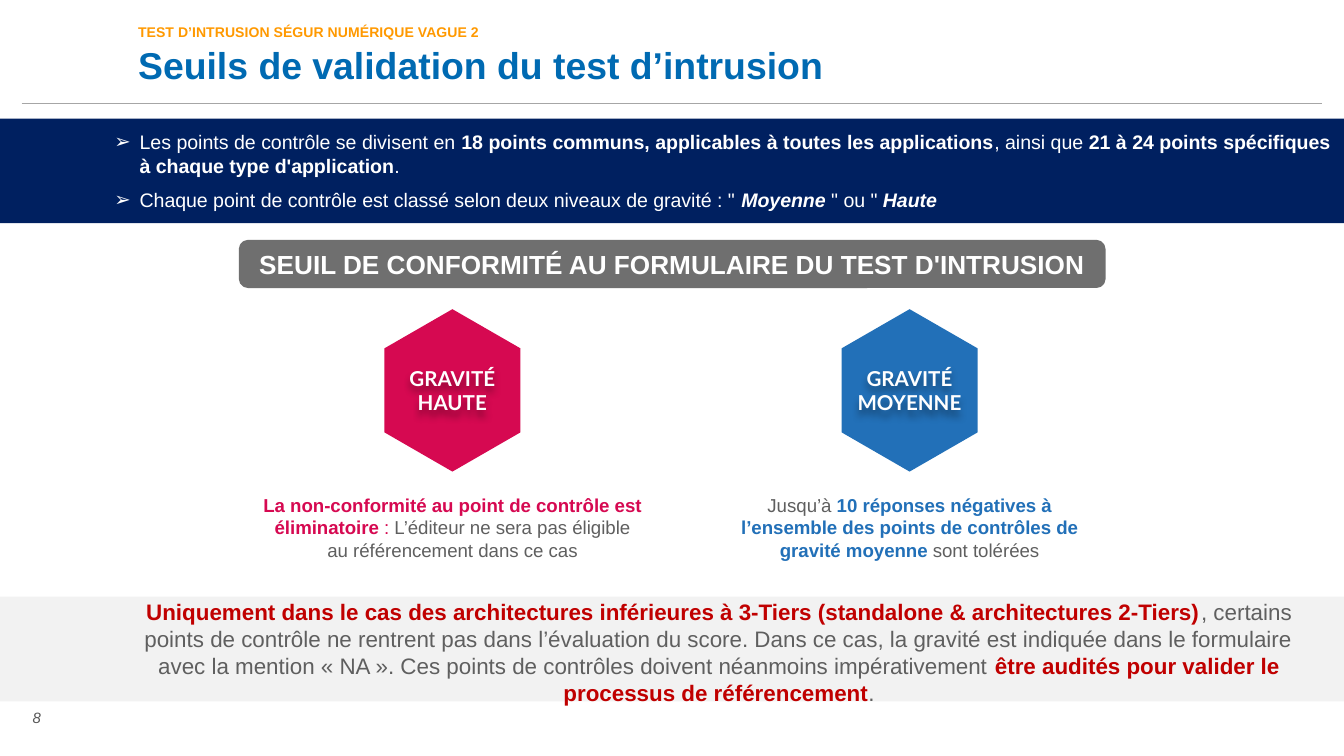
from lxml import etree
from pptx import Presentation
from pptx.dml.color import RGBColor
from pptx.enum.shapes import MSO_CONNECTOR, MSO_SHAPE
from pptx.enum.text import MSO_ANCHOR, MSO_AUTO_SIZE, PP_ALIGN
from pptx.oxml.ns import qn
from pptx.util import Cm, Pt

LEFT, CENTER, JUSTIFY = PP_ALIGN.LEFT, PP_ALIGN.CENTER, PP_ALIGN.JUSTIFY
MIDDLE, BOTTOM = MSO_ANCHOR.MIDDLE, MSO_ANCHOR.BOTTOM
RECTANGLE, ROUNDED = MSO_SHAPE.RECTANGLE, MSO_SHAPE.ROUNDED_RECTANGLE
HEXAGON, STRAIGHT = MSO_SHAPE.HEXAGON, MSO_CONNECTOR.STRAIGHT
NO_AUTOFIT = MSO_AUTO_SIZE.NONE

WHITE, GREY, DARK_GREY = "FFFFFF", "5F5F5F", "6F6F6F"
NAVY, TITLE_BLUE, ORANGE = "002060", "006AB2", "FF9900"
PINK, BLUE, RED = "D60951", "2270B8", "C00000"
PAGE_WIDTH = 25.4


def rgb(value):
    return RGBColor.from_string(value)


class SlideBuilder:
    """Holds the text style and the slide being filled."""

    font = "Arial"

    def __init__(self, slide):
        self.slide = slide
        self.shapes = slide.shapes

    def place(self, shape, left, top, width, height):
        shape.left, shape.top = Cm(left), Cm(top)
        shape.width, shape.height = Cm(width), Cm(height)
        return shape

    def frame(self, shape, anchor=MIDDLE, inset=(0.25, 0.13)):
        frame = shape.text_frame
        frame.word_wrap, frame.auto_size = True, NO_AUTOFIT
        frame.vertical_anchor = anchor
        frame.margin_left = frame.margin_right = Cm(inset[0])
        frame.margin_top = frame.margin_bottom = Cm(inset[1])
        return frame

    def fill_paragraph(self, paragraph, runs, size, color, align=CENTER, font=None,
                       bold=None, italic=None):
        """Each run is (text, overrides); overrides may hold color, bold, italic."""
        paragraph.alignment = align
        style = paragraph.font
        style.name, style.size = font or self.font, Pt(size)
        style.bold, style.italic = bold, italic
        style.color.rgb = rgb(color)
        for text, overrides in runs:
            run = paragraph.add_run()
            run.text = text
            if "color" in overrides:
                run.font.color.rgb = rgb(overrides["color"])
            run.font.bold = overrides.get("bold")
            run.font.italic = overrides.get("italic")

    def title(self, text, box):
        shape = self.place(self.shapes.title, *box)
        paragraph = self.frame(shape, BOTTOM, (0.3, 0)).paragraphs[0]
        paragraph.line_spacing = Pt(22)
        self.fill_paragraph(paragraph, [(text, {})], 20, TITLE_BLUE, LEFT, bold=True)

    def bullet_band(self, items, box, fill):
        shape = self.place(self.slide.placeholders[1], *box)
        shape.fill.solid()
        shape.fill.fore_color.rgb = rgb(fill)
        frame = self.frame(shape)
        for index, runs in enumerate(items):
            paragraph = frame.add_paragraph() if index else frame.paragraphs[0]
            paragraph.space_before = Pt(6 if index else 0)
            properties = paragraph._p.get_or_add_pPr()
            properties.set("marL", str(Cm(2.39)))
            properties.set("indent", str(Cm(-0.48)))
            etree.SubElement(properties, qn("a:buFont"), typeface=self.font)
            etree.SubElement(properties, qn("a:buChar"), char="➢")
            self.fill_paragraph(paragraph, runs, 10.5, WHITE, JUSTIFY)

    def text(self, paragraphs, box, size, color, anchor=MIDDLE, inset=(0, 0), **style):
        shape = self.shapes.add_textbox(*map(Cm, box))
        frame = self.frame(shape, anchor, inset)
        for index, runs in enumerate(paragraphs):
            paragraph = frame.add_paragraph() if index else frame.paragraphs[0]
            self.fill_paragraph(paragraph, runs, size, color, **style)
        return shape

    def block(self, kind, box, fill):
        shape = self.shapes.add_shape(kind, *map(Cm, box))
        shape.shadow.inherit = False
        shape.fill.solid()
        shape.fill.fore_color.rgb = rgb(fill)
        shape.line.fill.background()
        return shape

    def rule(self, left, right, y, color):
        line = self.shapes.add_connector(STRAIGHT, Cm(left), Cm(y), Cm(right), Cm(y))
        line.line.color.rgb = rgb(color)
        line.line.width = Pt(0.25)
        etree.SubElement(line._element.spPr, qn("a:effectLst"))

    def soft_shadow(self, shape):
        effects = etree.SubElement(shape._element.spPr, qn("a:effectLst"))
        shadow = etree.SubElement(effects, qn("a:outerShdw"), blurRad=str(Pt(4)),
                                  dist=str(Pt(3)), dir="5400000", algn="t", rotWithShape="0")
        black = etree.SubElement(shadow, qn("a:srgbClr"), val="000000")
        etree.SubElement(black, qn("a:alpha"), val="40000")

    def severity(self, center, color, words, runs, width):
        """Upright hexagon with its label and the rule that applies below it."""
        middle, long_side, short_side = 7.38, 3.07, 2.57
        hexagon = self.block(HEXAGON, (center - long_side / 2, middle - short_side / 2,
                                       long_side, short_side), color)
        hexagon.adjustments[0] = 0.288
        hexagon.rotation = 90
        label = self.text([[(word, {})] for word in words],
                          (center - 1.3, middle - 0.6, 2.6, 1.2), 11, WHITE,
                          inset=(0.25, 0.13), font="Lato", bold=True)
        self.soft_shadow(label)
        self.text([runs], (center - width / 2, 9.27, width, 1.4), 10, GREY, inset=(0.05, 0.05))


def main():
    presentation = Presentation()
    presentation.slide_width, presentation.slide_height = Cm(PAGE_WIDTH), Cm(14.29)
    page = SlideBuilder(presentation.slides.add_slide(presentation.slide_layouts[1]))
    strong = {"bold": True}
    strong_italic = {"bold": True, "italic": True}

    # Heading
    page.rule(0.41, 24.99, 1.96, "A6A6A6")
    page.title("Seuils de validation du test d’intrusion", (2.31, 0.15, 22.4, 1.5))
    page.text([[("TEST D’INTRUSION SÉGUR NUMÉRIQUE VAGUE 2", {})]], (2.31, 0.25, 9.2, 0.51),
              7.5, ORANGE, BOTTOM, (0.3, 0), align=LEFT, bold=True)

    # Control points
    page.bullet_band([
        [("Les points de contrôle se divisent en ", {}),
         ("18 points communs, applicables à toutes les applications", strong),
         (", ainsi que ", {}),
         ("21 à 24 points spécifiques à chaque type d'application", strong),
         (".", {})],
        [("Chaque point de contrôle est classé selon deux niveaux de gravité : \" ", {}),
         ("Moyenne", strong_italic),
         (" \" ou \" ", {}),
         ("Haute", strong_italic)],
    ], (0, 2.24, PAGE_WIDTH, 1.98), NAVY)

    # Threshold banner
    banner = page.block(ROUNDED, (4.55, 4.57, 16.31, 0.84), DARK_GREY)
    banner.line.color.rgb = rgb(DARK_GREY)
    banner.line.width = Pt(2)
    page.fill_paragraph(page.frame(banner).paragraphs[0],
                        [("SEUIL DE CONFORMITÉ AU FORMULAIRE DU TEST D'INTRUSION", {})],
                        14, WHITE, bold=True)

    # Severity levels
    page.severity(8.55, PINK, ("GRAVITÉ", "HAUTE"), [
        ("La non-conformité au point de contrôle est éliminatoire", {"color": PINK, "bold": True}),
        (" : ", {"color": PINK}),
        ("L’éditeur ne sera pas éligible au référencement dans ce cas", {}),
    ], 7.29)
    page.severity(17.19, BLUE, ("GRAVITÉ", "MOYENNE"), [
        ("Jusqu’à ", {}),
        ("10 réponses négatives à l’ensemble des points de contrôles de gravité moyenne ",
         {"color": BLUE, "bold": True}),
        ("sont tolérées", {}),
    ], 6.6)

    # Note on smaller architectures
    warning = {"color": RED, "bold": True}
    page.block(RECTANGLE, (0, 11.28, PAGE_WIDTH, 1.98), "F2F2F2")
    page.text([[
        ("Uniquement dans le cas des architectures inférieures à 3-Tiers "
         "(standalone & architectures 2-Tiers)", warning),
        (", certains points de contrôle ne rentrent pas dans l’évaluation du score. "
         "Dans ce cas, la gravité est indiquée dans le formulaire avec la mention « NA ». "
         "Ces points de contrôles doivent néanmoins impérativement ", {}),
        ("être audités pour valider le processus de référencement", warning),
        (".", {}),
    ]], (2.49, 11.13, 22.2, 2.39), 12, GREY)

    # Page number
    page.text([[("8", {})]], (0.3, 13.18, 0.79, 0.76), 8, "575757", italic=True)

    presentation.save("out.pptx")


if __name__ == "__main__":
    main()
